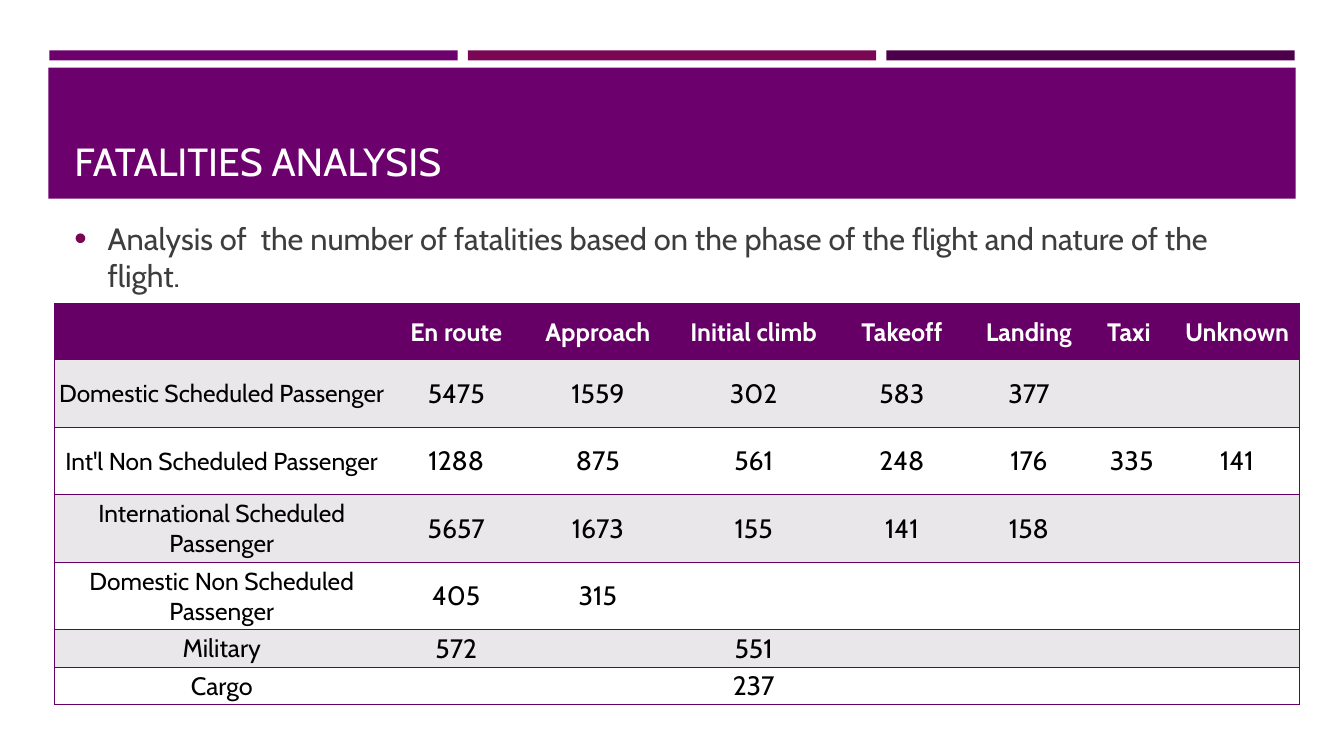
import dataclasses
import typing

import lxml.etree
import pptx
import pptx.dml.color
import pptx.enum.shapes
import pptx.enum.text
import pptx.oxml.ns
import pptx.util

Inches = pptx.util.Inches
Anchor = pptx.enum.text.MSO_ANCHOR
Align = pptx.enum.text.PP_ALIGN


@dataclasses.dataclass(frozen=True)
class Theme:
    font: str = "Cabin"
    purple: str = "6C006C"
    plum: str = "790753"
    dark_purple: str = "4C004C"
    table_purple: str = "660066"
    band: str = "EAE7EA"
    white: str = "FFFFFF"
    black: str = "000000"
    body_text: str = "3D3D3D"
    title_size: float = 28
    body_size: float = 22
    header_size: float = 18
    long_label_size: float = 17.5
    value_size: float = 19
    border_width: float = 1


@dataclasses.dataclass(frozen=True)
class Box:
    left: float
    top: float
    width: float
    height: float

    def lengths(self) -> list[int]:
        return [Inches(value) for value in dataclasses.astuple(self)]


@dataclasses.dataclass(frozen=True)
class Bar:
    box: Box
    color: str


@dataclasses.dataclass(frozen=True)
class FlightRow:
    label: str
    height: float
    label_size: float
    values: tuple[str, ...]


THEME = Theme()
BAR_COLORS = (THEME.purple, THEME.plum, THEME.dark_purple)
BARS = [Bar(Box(0.49 + 4.15 * index, 0.5, 4.05, 0.1), color) for index, color in enumerate(BAR_COLORS)]
BARS.append(Bar(Box(0.48, 0.67, 12.37, 1.3), THEME.purple))

TITLE_BOX = Box(0.64, 0.77, 12.06, 1.11)
BODY_BOX = Box(0.64, 2.13, 12.06, 0.84)
TABLE_BOX = Box(0.54, 3.01, 12.34, 3.97)
COLUMN_WIDTHS = (3.32, 1.33, 1.48, 1.61, 1.33, 1.19, 0.85, 1.24)
HEADER_HEIGHT = 0.56
HEADERS = ("", "En route", "Approach", "Initial climb", "Takeoff", "Landing", "Taxi ", "Unknown")
TALL, SHORT = 0.67, 0.37
LONG = THEME.long_label_size
FLIGHT_ROWS = (
    FlightRow("Domestic Scheduled Passenger", TALL, LONG, ("5475", "1559", "302", "583", "377", "", "")),
    FlightRow("Int'l Non Scheduled Passenger", TALL, LONG, ("1288", "875", "561", "248", "176", "335", "141")),
    FlightRow("International Scheduled Passenger", TALL, LONG, ("5657", "1673", "155", "141", "158", "", "")),
    FlightRow("Domestic Non Scheduled Passenger", TALL, LONG, ("405", "315", "", "", "", "", "")),
    FlightRow("Military", SHORT, THEME.header_size, ("572", "", "551", "", "", "", "")),
    FlightRow("Cargo", SHORT, THEME.header_size, ("", "", "237", "", "", "", "")),
)
NO_TABLE_STYLE = "{2D5ABB26-0587-4C30-8999-92F81FD0307C}"


def rgb(color: str) -> pptx.dml.color.RGBColor:
    return pptx.dml.color.RGBColor.from_string(color)


def add_element(parent: typing.Any, tag: str, **attributes: str) -> typing.Any:
    return lxml.etree.SubElement(parent, pptx.oxml.ns.qn(tag), attributes)


def write_text(frame: typing.Any, text: str, *, size: float, color: str,
               bold: bool = False, align: Align = Align.LEFT) -> typing.Any:
    paragraph = frame.paragraphs[0]
    paragraph.alignment = align
    if text:
        run = paragraph.add_run()
        run.text = text
        run.font.name = THEME.font
        run.font.size = pptx.util.Pt(size)
        run.font.bold = bold
        run.font.color.rgb = rgb(color)
    return paragraph


def add_bar(slide: typing.Any, bar: Bar) -> None:
    shape = slide.shapes.add_shape(pptx.enum.shapes.MSO_SHAPE.RECTANGLE, *bar.box.lengths())
    shape.shadow.inherit = False
    shape.fill.solid()
    shape.fill.fore_color.rgb = rgb(bar.color)
    shape.line.fill.background()


def add_text_frame(slide: typing.Any, box: Box, anchor: Anchor) -> typing.Any:
    frame = slide.shapes.add_textbox(*box.lengths()).text_frame
    frame.word_wrap = True
    frame.vertical_anchor = anchor
    return frame


def add_bullet(paragraph: typing.Any) -> None:
    properties = paragraph._p.get_or_add_pPr()
    indent = Inches(0.33)
    properties.set("marL", str(indent))
    properties.set("indent", str(-indent))
    add_element(add_element(properties, "a:buClr"), "a:srgbClr", val=THEME.plum)
    add_element(properties, "a:buSzPct", val="115000")
    add_element(properties, "a:buFont", typeface="Arial")
    add_element(properties, "a:buChar", char="•")


def add_borders(cell: typing.Any, sides: str) -> None:
    properties = cell._tc.get_or_add_tcPr()
    for side in "LRTB":
        if side in sides:
            width = pptx.util.Pt(THEME.border_width)
            line = add_element(properties, f"a:ln{side}", w=str(width))
            add_element(add_element(line, "a:solidFill"), "a:srgbClr", val=THEME.table_purple)


def format_cell(cell: typing.Any, fill: str, sides: str) -> None:
    cell.margin_left = cell.margin_right = cell.margin_top = Inches(0.01)
    cell.margin_bottom = 0
    cell.vertical_anchor = Anchor.MIDDLE
    add_borders(cell, sides)
    cell.fill.solid()
    cell.fill.fore_color.rgb = rgb(fill)


def add_fatalities_table(slide: typing.Any) -> None:
    frame = slide.shapes.add_table(len(FLIGHT_ROWS) + 1, len(HEADERS), *TABLE_BOX.lengths())
    table = frame.table
    table._tbl.tblPr.find(pptx.oxml.ns.qn("a:tableStyleId")).text = NO_TABLE_STYLE
    for column, width in zip(table.columns, COLUMN_WIDTHS):
        column.width = Inches(width)
    heights = (HEADER_HEIGHT, *(row.height for row in FLIGHT_ROWS))
    for table_row, height in zip(table.rows, heights):
        table_row.height = Inches(height)

    last = len(HEADERS) - 1
    for row_index in range(len(heights)):
        header = row_index == 0
        flight = FLIGHT_ROWS[row_index - 1]
        texts = HEADERS if header else (flight.label, *flight.values)
        fill = THEME.table_purple if header else THEME.band if row_index % 2 else THEME.white
        for column_index, text in enumerate(texts):
            cell = table.cell(row_index, column_index)
            format_cell(cell, fill, "TB" + {0: "L", last: "R"}.get(column_index, ""))
            size = THEME.header_size if header else THEME.value_size if column_index else flight.label_size
            write_text(cell.text_frame, text, size=size, bold=header, align=Align.CENTER,
                       color=THEME.white if header else THEME.black)


def main() -> None:
    """Build the fatalities analysis slide."""
    presentation = pptx.Presentation()
    presentation.slide_width = Inches(13.33)
    presentation.slide_height = Inches(7.5)
    slide = presentation.slides.add_slide(presentation.slide_layouts[6])
    for bar in BARS:
        add_bar(slide, bar)
    write_text(add_text_frame(slide, TITLE_BOX, Anchor.BOTTOM), "FATALITIES ANALYSIS",
               size=THEME.title_size, color=THEME.white)
    body = write_text(
        add_text_frame(slide, BODY_BOX, Anchor.TOP),
        "Analysis of  the number of fatalities based on the phase of the flight and nature of the flight.",
        size=THEME.body_size, color=THEME.body_text)
    add_bullet(body)
    add_fatalities_table(slide)
    presentation.save("out.pptx")


if __name__ == "__main__":
    main()
